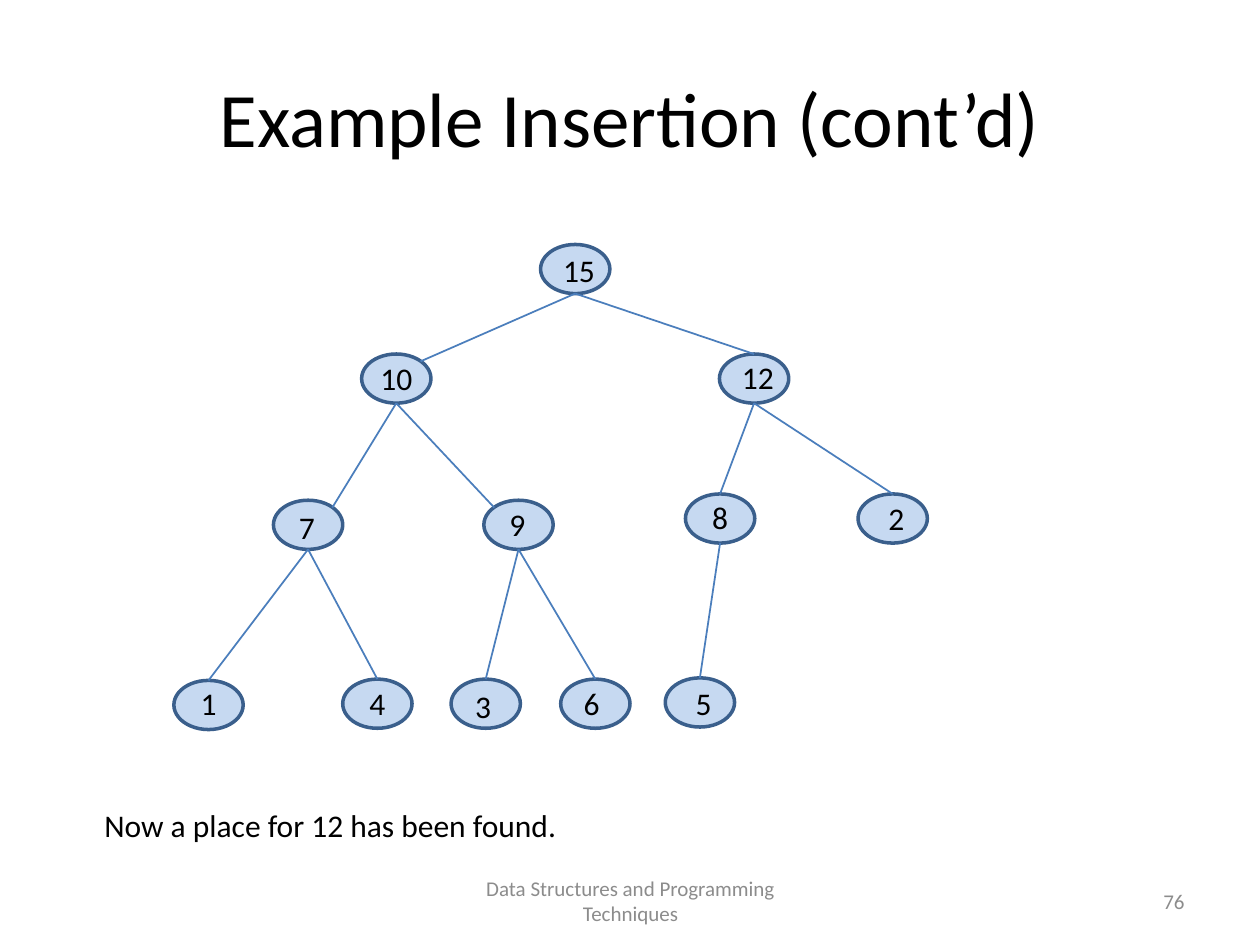
from lxml.etree import SubElement
from pptx import Presentation
from pptx.dml.color import RGBColor
from pptx.enum.shapes import MSO_CONNECTOR as Connector, MSO_SHAPE as Shape
from pptx.enum.text import MSO_ANCHOR as Anchor, PP_ALIGN as Align
from pptx.oxml.ns import qn
from pptx.util import Inches, Pt

BLACK = RGBColor(0x00, 0x00, 0x00)
GREY = RGBColor(0x8C, 0x8C, 0x8C)
NODE_FILL = RGBColor(0xC6, 0xD9, 0xF1)
NODE_LINE = RGBColor(0x3A, 0x5F, 0x8C)
EDGE_LINE = RGBColor(0x4B, 0x7E, 0xBC)

deck = Presentation()
deck.slide_width, deck.slide_height = Inches(10), Inches(7.5)
page = deck.slides.add_slide(deck.slide_layouts[6])

# The page is a grid of 100 columns by 75 rows.
COLUMN = deck.slide_width / 100
ROW = deck.slide_height / 75
NODE_W, NODE_H = 5.5, 3.9
LABEL_W, LABEL_H = 6.1, 4


def place(column, row):
    return round(column * COLUMN), round(row * ROW)


def add_text(text, column, row, columns, rows, size=18, color=BLACK,
             align=Align.CENTER, anchor=Anchor.TOP):
    box = page.shapes.add_textbox(*place(column, row), *place(columns, rows))
    frame = box.text_frame
    frame.word_wrap = True
    frame.vertical_anchor = anchor
    para = frame.paragraphs[0]
    para.alignment = align
    span = para.add_run()
    span.text = text
    span.font.name = "Calibri"
    span.font.size = Pt(size)
    span.font.color.rgb = color


add_text("Example Insertion (cont’d)", 5, 3, 90, 12.5, size=44, anchor=Anchor.MIDDLE)

# key: node column, node row, label column, label row
heap = {
    15: (42.9, 19.4, 42.9, 19.4),
    10: (28.7, 28.1, 28.4, 28.0),
    12: (57.1, 28.1, 57.1, 27.9),
    7: (21.7, 39.7, 21.3, 39.8),
    9: (38.4, 39.7, 38.0, 39.6),
    8: (54.4, 39.2, 54.1, 39.0),
    2: (68.1, 39.2, 68.1, 39.1),
    1: (13.8, 54.0, 13.5, 53.8),
    4: (27.2, 53.9, 26.9, 53.8),
    3: (35.8, 53.9, 35.3, 54.0),
    6: (44.5, 53.9, 43.9, 53.8),
    5: (52.8, 53.8, 52.8, 53.8),
}
ellipses = {}
for key, (column, row, _, _) in heap.items():
    ellipse = page.shapes.add_shape(
        Shape.OVAL, *place(column, row), *place(NODE_W, NODE_H))
    ellipse.shadow.inherit = False
    ellipse.fill.solid()
    ellipse.fill.fore_color.rgb = NODE_FILL
    ellipse.line.color.rgb = NODE_LINE
    ellipse.line.width = Pt(2)
    ellipses[key] = ellipse

# Edges that meet the child on its shoulder, as shares of the node's size.
shoulders = {10: (0.85, 0.15), 7: (0.85, 0.15), 9: (0.15, 0.15)}
keys = list(heap)
for index, child in enumerate(keys[1:], start=1):
    parent = keys[(index - 1) // 2]
    parent_column, parent_row = heap[parent][:2]
    child_column, child_row = heap[child][:2]
    share_x, share_y = shoulders.get(child, (0.5, 0))
    edge = page.shapes.add_connector(
        Connector.STRAIGHT,
        *place(parent_column + NODE_W / 2, parent_row + NODE_H),
        *place(child_column + share_x * NODE_W, child_row + share_y * NODE_H))
    if child not in shoulders:
        edge.end_connect(ellipses[child], 0)
    edge.line.color.rgb = EDGE_LINE
    edge.line.width = Pt(1)
    SubElement(edge._element.spPr, qn("a:effectLst"))

for key, (_, _, column, row) in heap.items():
    add_text(str(key), column, row, LABEL_W, LABEL_H)

add_text("Now a place for 12 has been found.", 7.3, 63.5, 87.6, 4, align=Align.LEFT)
add_text("Data Structures and Programming Techniques", 34.2, 69.5, 31.7, 4,
         size=12, color=GREY, anchor=Anchor.MIDDLE)
add_text("76", 71.7, 69.5, 23.3, 4, size=12, color=GREY,
         align=Align.RIGHT, anchor=Anchor.MIDDLE)

deck.save("out.pptx")
